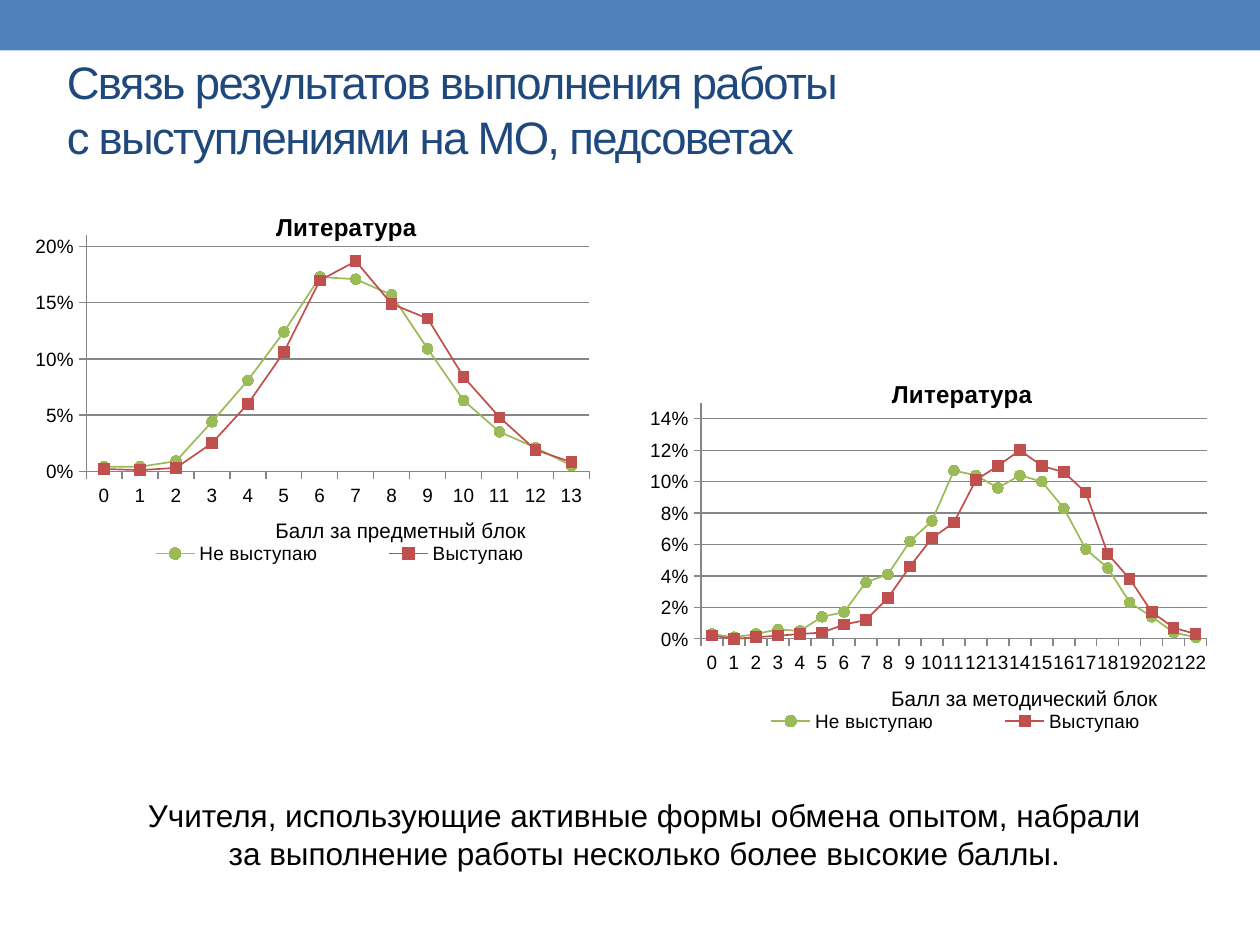
"""Build a slide comparing score distributions in two line charts."""
from dataclasses import dataclass

from pptx import Presentation, util as u
from pptx.chart.data import CategoryChartData
from pptx.dml.color import RGBColor
from pptx.enum import chart as ch, shapes, text
from pptx.oxml import parse_xml
from pptx.oxml.ns import nsdecls, qn

FONT = "Arial"
SERIES = (
    ("Не выступаю", "9BBB59", ch.XL_MARKER_STYLE.CIRCLE),
    ("Выступаю", "C0504D", ch.XL_MARKER_STYLE.SQUARE),
)


@dataclass
class ScoreChart:
    left: float
    top: float
    width: float
    axis_title: str
    maximum: float
    step: float
    values: tuple


CHARTS = (
    ScoreChart(5.16, 2.88, 4.59, "Балл за методический блок", 0.15, 0.02, (
        (0.003, 0.001, 0.003, 0.006, 0.005, 0.014, 0.017, 0.036, 0.041, 0.062, 0.075, 0.107,
         0.104, 0.096, 0.104, 0.1, 0.083, 0.057, 0.045, 0.023, 0.014, 0.004, 0.001),
        (0.002, 0, 0.001, 0.002, 0.003, 0.004, 0.009, 0.012, 0.026, 0.046, 0.064, 0.074,
         0.101, 0.11, 0.12, 0.11, 0.106, 0.093, 0.054, 0.038, 0.017, 0.007, 0.003))),
    ScoreChart(0.28, 1.55, 4.57, "Балл за предметный блок", 0.21, 0.05, (
        (0.004, 0.004, 0.009, 0.044, 0.081, 0.124, 0.173, 0.171, 0.157, 0.109, 0.063, 0.035,
         0.021, 0.005),
        (0.002, 0.001, 0.003, 0.025, 0.06, 0.106, 0.17, 0.187, 0.149, 0.136, 0.084, 0.048,
         0.019, 0.008))),
)


def paint(color, value: str) -> None:
    """Set a colour from a hex string."""
    color.rgb = RGBColor.from_string(value)


def fill_solid(fill, value: str) -> None:
    """Fill with one colour."""
    fill.solid()
    paint(fill.fore_color, value)


def style_font(font, size: float, color: str = "000000", bold: bool = False) -> None:
    """Set the typeface, size, colour and weight of a font."""
    font.name, font.size, font.bold = FONT, u.Pt(size), bold
    paint(font.color, color)


def write(tf, content: str, *, size: float, color: str = "000000", bold: bool = False,
          align=None, spacing: int = 0) -> None:
    """Write one paragraph with its format into a text frame."""
    p = tf.paragraphs[0]
    p.alignment = align
    for i, line in enumerate(content.split("\n")):
        if i:
            p.add_line_break()
        r = p.add_run()
        r.text = line
        style_font(r.font, size, color, bold)
        if spacing:
            r.font._element.set("spc", str(spacing))


def place(element, **fractions: float) -> None:
    """Give a chart part a manual layout in fractions of the chart."""
    for old in element.findall(qn("c:layout")):
        element.remove(old)
    inner = '<c:layoutTarget val="inner"/>' if element.tag == qn("c:plotArea") else ""
    modes = '<c:xMode val="edge"/><c:yMode val="edge"/>'
    sizes = "".join(f'<c:{k} val="{v}"/>' for k, v in fractions.items())
    layout = parse_xml(f'<c:layout {nsdecls("c")}><c:manualLayout>{inner}{modes}{sizes}'
                       '</c:manualLayout></c:layout>')
    overlay = element.find(qn("c:overlay"))
    if overlay is None:
        element.insert(0, layout)
    else:
        overlay.addprevious(layout)


def style_axis(axis) -> None:
    """Format the line, ticks and labels of an axis."""
    axis.major_tick_mark = ch.XL_TICK_MARK.OUTSIDE
    axis.minor_tick_mark = ch.XL_TICK_MARK.NONE
    style_font(axis.tick_labels.font, 11)
    axis.format.line.width = u.Pt(0.75)
    paint(axis.format.line.color, "868686")


def add_score_chart(s, item: ScoreChart) -> None:
    """Add a line chart with one line per group of teachers."""
    data = CategoryChartData(number_format="0%")
    data.categories = [str(n) for n in range(len(item.values[0]))]
    for (name, _, _), values in zip(SERIES, item.values):
        data.add_series(name, values)
    chart = s.shapes.add_chart(
        ch.XL_CHART_TYPE.LINE_MARKERS, u.Inches(item.left), u.Inches(item.top),
        u.Inches(item.width), u.Inches(3.01), data).chart
    style_font(chart.font, 10)
    chart.has_title = True
    write(chart.chart_title.text_frame, "Литература", size=14, bold=True)
    place(chart.chart_title.element, x=0.4, y=0.03)

    cats, vals = chart.category_axis, chart.value_axis
    style_axis(cats)
    style_axis(vals)
    write(cats.axis_title.text_frame, item.axis_title, size=12)
    place(cats.axis_title.element, x=0.4, y=0.84)
    vals.minimum_scale, vals.maximum_scale, vals.major_unit = 0, item.maximum, item.step
    vals.tick_labels.number_format = "0%"
    vals.tick_labels.number_format_is_linked = False
    vals.has_major_gridlines = True
    grid = vals.major_gridlines.format.line
    grid.width = u.Pt(0.75)
    paint(grid.color, "868686")

    chart.has_legend = True
    chart.legend.position = ch.XL_LEGEND_POSITION.BOTTOM
    chart.legend.include_in_layout = False
    style_font(chart.legend.font, 11)
    place(chart.element.find(".//" + qn("c:legend")), x=0.08, y=0.9, w=0.88, h=0.09)
    place(chart.element.find(".//" + qn("c:plotArea")), x=0.072, y=0.106, w=0.89, h=0.622)

    chart.plots[0].vary_by_categories = False
    for line, (_, color, marker) in zip(chart.plots[0].series, SERIES):
        line.smooth = False
        line.format.line.width = u.Pt(1)
        paint(line.format.line.color, color)
        line.marker.style, line.marker.size = marker, 6
        fill_solid(line.marker.format.fill, color)
        paint(line.marker.format.line.color, color)


def main() -> None:
    """Build and save the slide."""
    prs = Presentation()
    prs.slide_width, prs.slide_height = u.Inches(10), u.Inches(7.5)
    s = prs.slides.add_slide(prs.slide_layouts[5])

    banner = s.shapes.add_shape(shapes.MSO_SHAPE.RECTANGLE, 0, 0, prs.slide_width, u.Inches(0.4))
    banner.shadow.inherit = False
    fill_solid(banner.fill, "4F81BD")
    banner.line.fill.background()

    title = s.shapes.title
    title.left, title.top = u.Inches(0.43), u.Inches(0.44)
    title.width, title.height = u.Inches(9), u.Inches(0.85)
    title.text_frame.vertical_anchor = text.MSO_ANCHOR.MIDDLE
    title.text_frame.auto_size = text.MSO_AUTO_SIZE.NONE
    write(title.text_frame, "Связь результатов выполнения работы \nс выступлениями на МО, педсоветах",
          size=26, color="1F497D", align=text.PP_ALIGN.LEFT, spacing=-100)

    for item in CHARTS:
        add_score_chart(s, item)

    sp = s.shapes.add_textbox(u.Inches(0.98), u.Inches(6.27), u.Inches(8.27), u.Inches(0.71))
    sp.text_frame.word_wrap = True
    sp.text_frame.auto_size = text.MSO_AUTO_SIZE.SHAPE_TO_FIT_TEXT
    write(sp.text_frame, "Учителя, использующие активные формы обмена опытом, набрали "
          "за выполнение работы несколько более высокие баллы.",
          size=18, align=text.PP_ALIGN.CENTER)
    prs.save("out.pptx")


if __name__ == "__main__":
    main()
